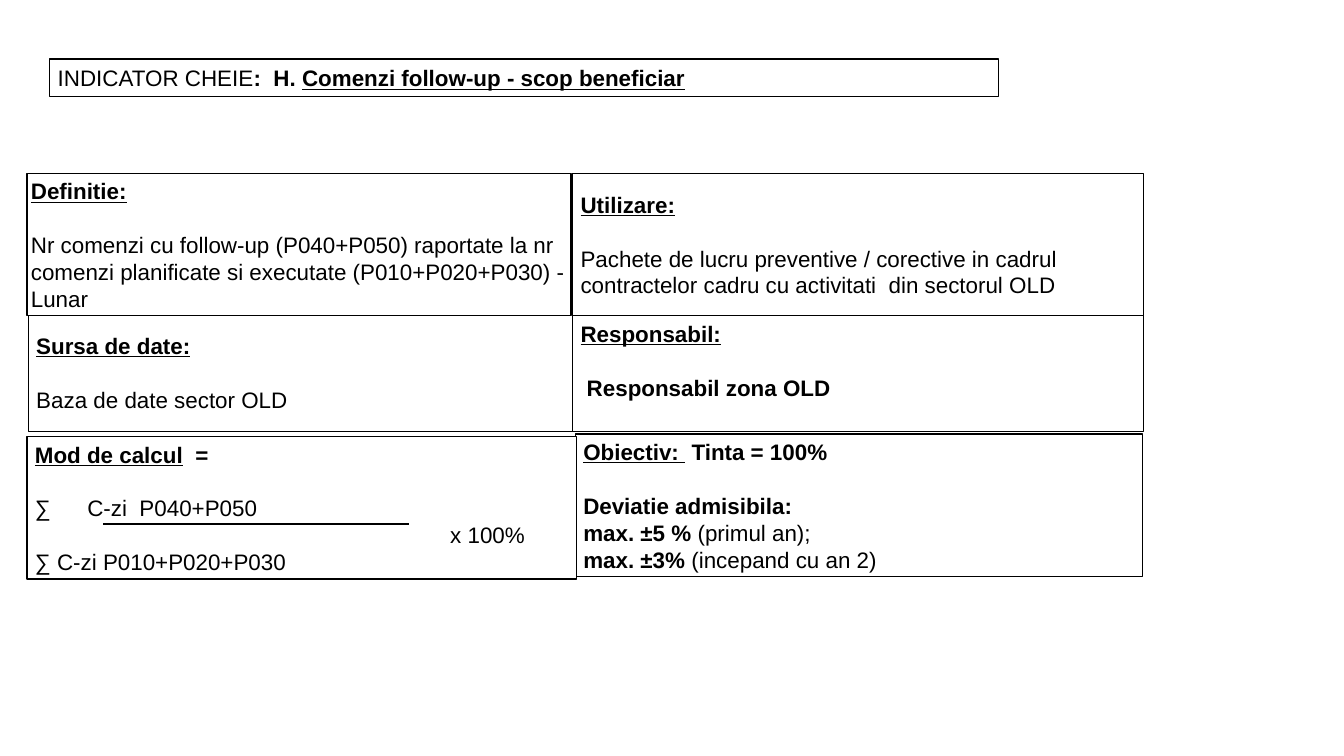
from lxml.etree import SubElement
from pptx import Presentation
from pptx.dml.color import RGBColor
from pptx.enum.shapes import MSO_CONNECTOR, MSO_SHAPE
from pptx.enum.text import MSO_ANCHOR, PP_ALIGN
from pptx.oxml.ns import qn
from pptx.util import Inches, Pt

BLACK = RGBColor(0, 0, 0)
WHITE = RGBColor(255, 255, 255)
PLAIN = {"name": "Arial", "size": Pt(12), "bold": False, "underline": False}
BOLD = {**PLAIN, "bold": True}
HEADING = {**BOLD, "underline": True}
FRAME = {
    "word_wrap": True,
    "vertical_anchor": MSO_ANCHOR.MIDDLE,
    "margin_left": Inches(0.06),
    "margin_right": Inches(0.06),
    "margin_top": Inches(0.03),
    "margin_bottom": Inches(0.03),
}
SECTION_GAP = Pt(14.5)

DEFINITION = [
    [("Definitie:", HEADING)],
    [("Nr comenzi cu follow-up (P040+P050) raportate la nr comenzi planificate "
      "si executate (P010+P020+P030) - Lunar", PLAIN)],
]
USAGE = [
    [("Utilizare:", HEADING)],
    [("Pachete de lucru preventive / corective in cadrul contractelor cadru "
      "cu activitati  din sectorul OLD", PLAIN)],
]
SOURCE = [[("Sursa de date:", HEADING)], [("Baza de date sector OLD", PLAIN)]]
OWNER = [[("Responsabil:", HEADING)], [(" Responsabil zona OLD", BOLD)]]
TARGET = [
    [("Obiectiv: ", HEADING), (" Tinta = 100%", BOLD)],
    [("Deviatie admisibila:", BOLD)],
    [("max. ±5 %", BOLD), (" (primul an);", PLAIN)],
    [("max. ±3% ", BOLD), ("(incepand cu an 2)", PLAIN)],
]
FORMULA = [
    [("Mod de calcul", HEADING), ("  =", BOLD)],
    [("∑\tC-zi  P040+P050", PLAIN)],
    [("x 100%", PLAIN)],
    [("∑ C-zi P010+P020+P030", PLAIN)],
]


def apply_format(target, values):
    """Set every attribute named in values on target."""
    for name, value in values.items():
        setattr(target, name, value)


def add_panel(page, area, paragraphs, **frame_changes):
    """Add a bordered text panel and return its paragraphs."""
    box = page.shapes.add_shape(MSO_SHAPE.RECTANGLE, *map(Inches, area))
    box.shadow.inherit = False
    box.fill.solid()
    box.fill.fore_color.rgb = WHITE
    box.line.color.rgb = BLACK
    box.line.width = Pt(0.75)
    frame = box.text_frame
    apply_format(frame, {**FRAME, **frame_changes})
    for index, spans in enumerate(paragraphs):
        para = frame.add_paragraph() if index else frame.paragraphs[0]
        para.alignment = PP_ALIGN.LEFT
        if index == 1:
            para.space_before = SECTION_GAP
        for text, style in spans:
            span = para.add_run()
            span.text = text
            apply_format(span.font, style)
            span.font.color.rgb = BLACK
    return frame.paragraphs


def add_title(page, area):
    """Add the key indicator heading."""
    add_panel(page, area, [[
        ("INDICATOR CHEIE", PLAIN),
        (":  H. ", BOLD),
        ("Comenzi follow-up - scop beneficiar", HEADING),
    ]])


def add_formula(page, area):
    """Add the calculation panel with its fraction bar."""
    left, top, width, height = area
    heading, numerator, factor, denominator = add_panel(page, area, FORMULA)
    tabs = SubElement(numerator._p.get_or_add_pPr(), qn("a:tabLst"))
    SubElement(tabs, qn("a:tab"), pos=str(Inches(0.39)), algn="l")
    factor._p.get_or_add_pPr().set("marL", str(Inches(3.09)))
    bar_y = Inches(top + 0.65)
    bar = page.shapes.add_connector(
        MSO_CONNECTOR.STRAIGHT, Inches(left + 0.57), bar_y, Inches(left + 2.84), bar_y)
    bar.line.color.rgb = BLACK
    bar.line.width = Pt(0.75)
    SubElement(bar._element.spPr, qn("a:effectLst"))


def add_indicator_sheet(page, area):
    """Add the six panels describing the indicator."""
    left, top, width, height = area
    middle = left + 4.06
    right_width = left + width - middle
    second, third = top + 1.06, top + 1.94
    add_panel(page, (left + 0.01, second - 0.02, 4.05, 0.88), SOURCE)
    add_panel(page, (left, top, 4.05, 1.06), DEFINITION,
              margin_left=Inches(0.03), margin_right=0)
    add_panel(page, (middle, top, right_width, 1.06), USAGE)
    add_panel(page, (middle, second, right_width, 0.86), OWNER,
              vertical_anchor=MSO_ANCHOR.TOP)
    add_panel(page, (middle + 0.02, third, right_width - 0.03, 1.06), TARGET)
    add_formula(page, (left, third + 0.02, 4.09, 1.06))


def main():
    """Build the indicator slide."""
    deck = Presentation()
    deck.slide_width = Inches(10)
    deck.slide_height = deck.slide_width * 9 // 16
    page = deck.slides.add_slide(deck.slide_layouts[6])
    add_title(page, (0.37, 0.44, 7.06, 0.28))
    add_indicator_sheet(page, (0.2, 1.29, 8.31, 3.02))
    deck.save("out.pptx")


if __name__ == "__main__":
    main()
